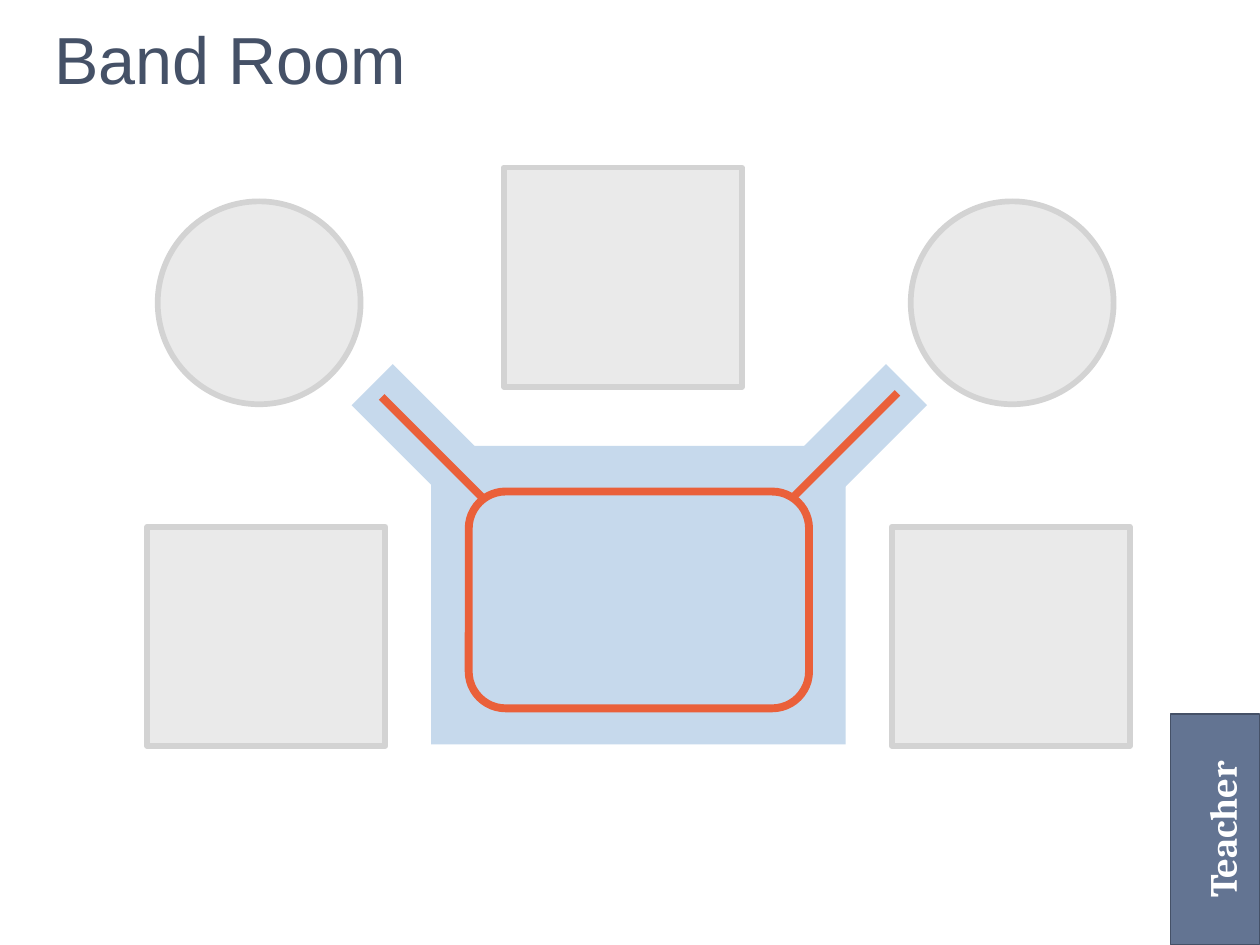
"""Builds the Band Room seating plan slide."""
from pptx import Presentation
from pptx import util as u
from pptx.dml import color
from pptx.enum import shapes, text

COLORS = {
    "rug": "C6D9EC", "outline": "EA603A", "navy": "455167", "desk": "637492",
    "seat": "EAEAEA", "seat_edge": "D3D3D3", "white": "FFFFFF",
}
KIND = shapes.MSO_SHAPE


def rgb(name):
    return color.RGBColor.from_string(COLORS[name])


def add_block(kind, box, fill=None, line=None, width=0, turn=0):
    block = slide.shapes.add_shape(kind, *(u.Cm(length) for length in box))
    block.shadow.inherit = False
    block.rotation = turn
    if fill:
        block.fill.solid()
        block.fill.fore_color.rgb = rgb(fill)
    else:
        block.fill.background()
    if line:
        block.line.color.rgb = rgb(line)
        block.line.width = u.Pt(width)
    else:
        block.line.fill.background()
    return block


deck = Presentation()
deck.slide_width, deck.slide_height = u.Cm(25.4), u.Cm(19.05)
slide = deck.slides.add_slide(deck.slide_layouts[5])

heading = slide.shapes.title
heading.left, heading.top = u.Cm(0.84), u.Cm(-0.43)
heading.width, heading.height = u.Cm(22.86), u.Cm(3.18)
heading.text_frame.vertical_anchor = text.MSO_ANCHOR.MIDDLE
heading_line = heading.text_frame.paragraphs[0]
heading_line.alignment = text.PP_ALIGN.LEFT
heading_run = heading_line.add_run()
heading_run.text = "Band Room"
heading_run.font.name = "Arial"
heading_run.font.size = u.Pt(38)
heading_run.font.color.rgb = rgb("navy")

for left, turn in ((9.27, 315), (15.34, 45)):
    add_block(KIND.RECTANGLE, (left, 6.78, 1.17, 6.65), "rug", turn=turn)
add_block(KIND.RECTANGLE, (8.69, 8.99, 8.36, 6.02), "rug")
stage = add_block(KIND.ROUNDED_RECTANGLE, (9.45, 9.91, 6.86, 4.37), line="outline", width=4.5)
stage.adjustments[0] = 0.17
for left, top, turn in ((8.66, 7.57, 315), (16.97, 7.49, 45)):
    add_block(KIND.RECTANGLE, (left, top, 0.16, 2.95), "outline", turn=turn)

desk = add_block(KIND.RECTANGLE, (22.17, 15.82, 4.65, 1.8), "desk", "navy", 0.75, 270)
label = desk.text_frame
label.margin_left = label.margin_right = label.margin_bottom = u.Cm(0.1)
label.margin_top = u.Cm(0.36)
label.vertical_anchor = text.MSO_ANCHOR.MIDDLE
label_line = label.paragraphs[0]
label_line.alignment = text.PP_ALIGN.CENTER
label_run = label_line.add_run()
label_run.text = "Teacher"
label_run.font.name = "Cambria"
label_run.font.size = u.Pt(22)
label_run.font.bold = True
label_run.font.color.rgb = rgb("white")

for left, top in ((2.97, 10.62), (17.98, 10.62), (10.16, 3.38)):
    add_block(KIND.RECTANGLE, (left, top, 4.8, 4.42), "seat", "seat_edge", 3.25)
for left in (3.18, 18.36):
    add_block(KIND.OVAL, (left, 4.06, 4.09, 4.09), "seat", "seat_edge", 3.25)

deck.save("out.pptx")
